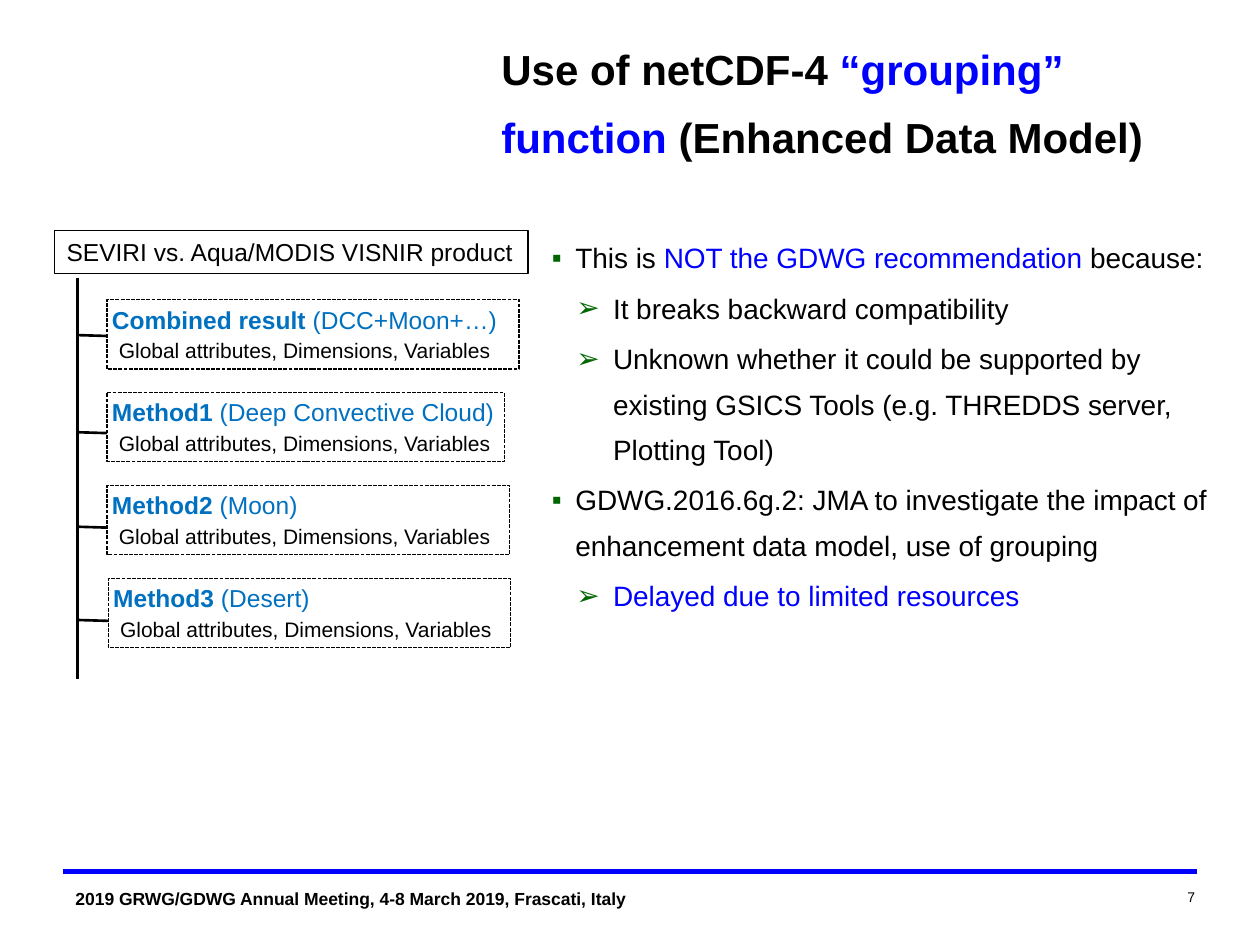
"""Build the slide on netCDF-4 grouping with a product tree and remarks."""
from dataclasses import dataclass

from lxml.etree import SubElement
from pptx import Presentation
from pptx.dml.color import RGBColor
from pptx.enum.dml import MSO_LINE
from pptx.enum.shapes import MSO_CONNECTOR, MSO_SHAPE
from pptx.enum.text import MSO_ANCHOR, MSO_AUTO_SIZE, PP_ALIGN
from pptx.oxml.ns import qn
from pptx.util import Pt


@dataclass(frozen=True)
class Theme:
    """Colours, font and type sizes."""

    font: str = "Arial"
    black: str = "000000"
    blue: str = "0000FF"
    sky: str = "0070C0"
    green: str = "006600"
    title: int = 24
    body: int = 16
    label: int = 14
    detail: int = 12
    foot: int = 10
    page: int = 8


theme = Theme()
deck = Presentation()
deck.slide_width, deck.slide_height = Pt(720), Pt(540)
slide = deck.slides.add_slide(deck.slide_layouts[6])
shapes = slide.shapes


def write(para, size, runs, bold=None):
    """Fill a paragraph with (text, colour) runs."""
    para.font.name, para.font.size = theme.font, Pt(size)
    para.font.bold = bold
    for text, color in runs:
        run = para.add_run()
        run.text = text
        run.font.color.rgb = RGBColor.from_string(color)


def rule(x1, y1, x2, y2, color, width):
    """Draw a straight line without shadow."""
    line = shapes.add_connector(MSO_CONNECTOR.STRAIGHT, Pt(x1), Pt(y1), Pt(x2), Pt(y2))
    line.line.color.rgb = RGBColor.from_string(color)
    line.line.width = Pt(width)
    SubElement(line._element.spPr, qn("a:effectLst"))


rule(36, 498.2, 684, 498.2, theme.blue, 3)
foot = shapes.add_textbox(Pt(36), Pt(504), Pt(445), Pt(19.5)).text_frame
foot.word_wrap = True
venue = "2019 GRWG/GDWG Annual Meeting, 4-8 March 2019, Frascati, Italy"
write(foot.paragraphs[0], theme.foot, [(venue, theme.black)], True)

page = shapes.add_textbox(Pt(522), Pt(504), Pt(168), Pt(25)).text_frame
page.word_wrap = True
page.paragraphs[0].alignment = PP_ALIGN.RIGHT
write(page.paragraphs[0], theme.page, [("7", theme.black)])

title = shapes.add_textbox(Pt(279.4), Pt(11.5), Pt(406), Pt(83)).text_frame
title.word_wrap = True
title.paragraphs[0].line_spacing = 1.35
write(title.paragraphs[0], theme.title, [
    ("Use of netCDF-4 ", theme.black),
    ("“grouping” function ", theme.blue),
    ("(Enhanced Data Model)", theme.black),
], True)

remarks = [
    (0, [("This is ", theme.black),
         ("NOT the GDWG recommendation", theme.blue),
         (" because:", theme.black)]),
    (1, [("It breaks backward compatibility", theme.black)]),
    (1, [("Unknown whether it could be supported by existing GSICS Tools "
          "(e.g. THREDDS server, Plotting Tool)", theme.black)]),
    (0, [("GDWG.2016.6g.2: JMA to investigate the impact of enhancement "
          "data model, use of grouping", theme.black)]),
    (1, [("Delayed due to limited resources", theme.blue)]),
]
levels = [("▪", 13.5, 13.5), ("➢", 35, 21)]
body = shapes.add_textbox(Pt(308.2), Pt(127.4), Pt(398), Pt(283)).text_frame
body.word_wrap = True
for i, (level, runs) in enumerate(remarks):
    para = body.add_paragraph() if i else body.paragraphs[0]
    mark, left, hang = levels[level]
    para.line_spacing = 1.35
    para.space_before = Pt(3 if i else 0)
    props = para._p.get_or_add_pPr()
    props.set("marL", str(Pt(left)))
    props.set("indent", str(-Pt(hang)))
    tint = SubElement(props, qn("a:buClr"))
    SubElement(tint, qn("a:srgbClr"), val=theme.green)
    SubElement(props, qn("a:buFont"), typeface=theme.font)
    SubElement(props, qn("a:buChar"), char=mark)
    write(para, theme.body, runs)

groups = [
    ("Combined result", " (DCC+Moon+…)", 61.2, 235.5, 191.5),
    ("Method1", " (Deep Convective Cloud)", 61.2, 227, 247),
    ("Method2", " (Moon)", 61.2, 230, 301),
    ("Method3", " (Desert)", 61.9, 230, 354.3),
]
boxes = [(31, 131.8, 270.7, 24.5, None)]
for i, (name, note, left, width, tick) in enumerate(groups):
    boxes.append((left, 171.2 + 53.1 * i, width, 39.6, (name, note)))
    rule(44.2, tick, left, tick + 0.5, theme.black, 1.5)
rule(44.2, 158.6, 44.2, 388.2, theme.black, 1.5)

for left, top, width, height, group in boxes:
    box = shapes.add_shape(MSO_SHAPE.RECTANGLE, Pt(left), Pt(top), Pt(width), Pt(height))
    box.shadow.inherit = False
    box.fill.background()
    box.line.color.rgb = RGBColor.from_string(theme.black)
    box.line.width = Pt(0.75)
    frame = box.text_frame
    frame.word_wrap = True
    frame.vertical_anchor = MSO_ANCHOR.TOP
    frame.auto_size = MSO_AUTO_SIZE.SHAPE_TO_FIT_TEXT
    head = frame.paragraphs[0]
    head.alignment = PP_ALIGN.LEFT
    if not group:
        write(head, theme.label, [("SEVIRI vs. Aqua/MODIS VISNIR product", theme.black)])
        continue
    box.line.dash_style = MSO_LINE.SQUARE_DOT
    frame.margin_left = frame.margin_right = Pt(2.8)
    frame.margin_top = frame.margin_bottom = Pt(2.8)
    write(head, theme.label, [(part, theme.sky) for part in group])
    head.runs[0].font.bold = True
    info = frame.add_paragraph()
    info.alignment = PP_ALIGN.LEFT
    write(info, theme.label, [
        (" ", theme.black),
        ("Global attributes, Dimensions, Variables", theme.black),
    ])
    info.runs[1].font.size = Pt(theme.detail)

deck.save("out.pptx")
